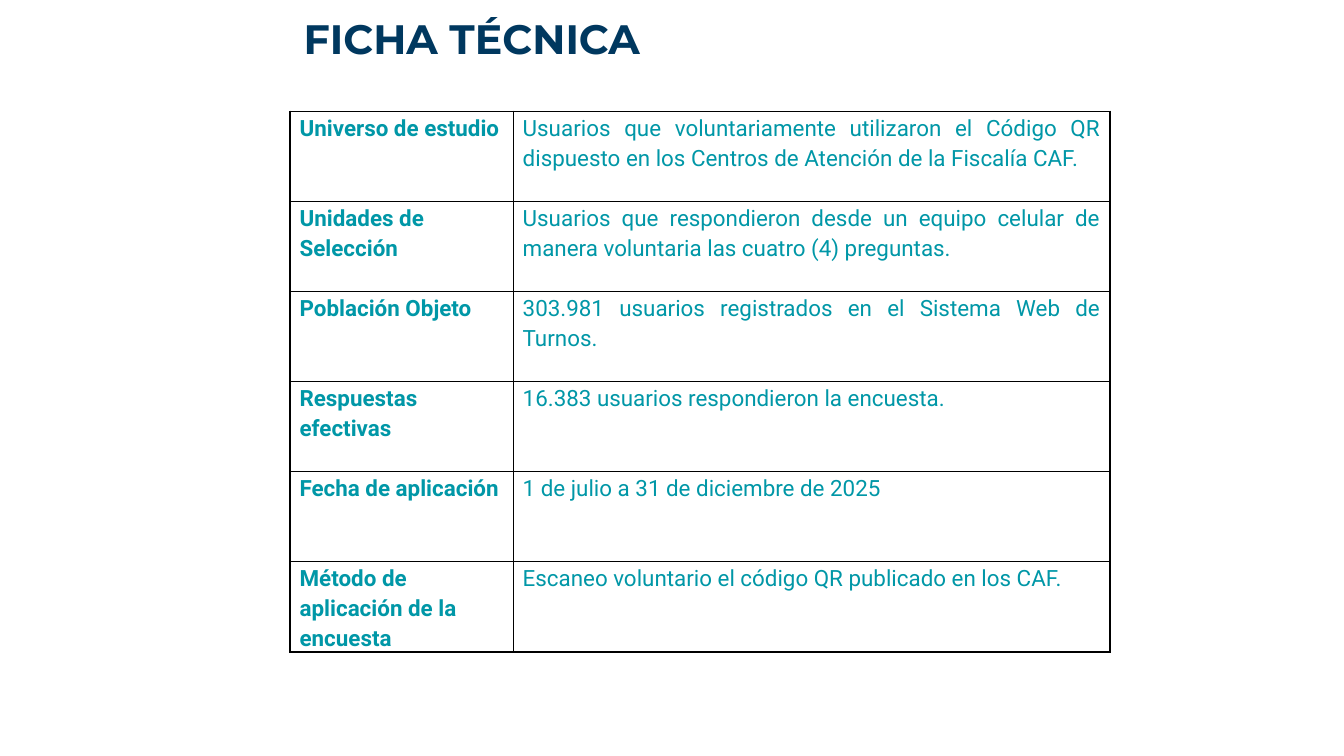
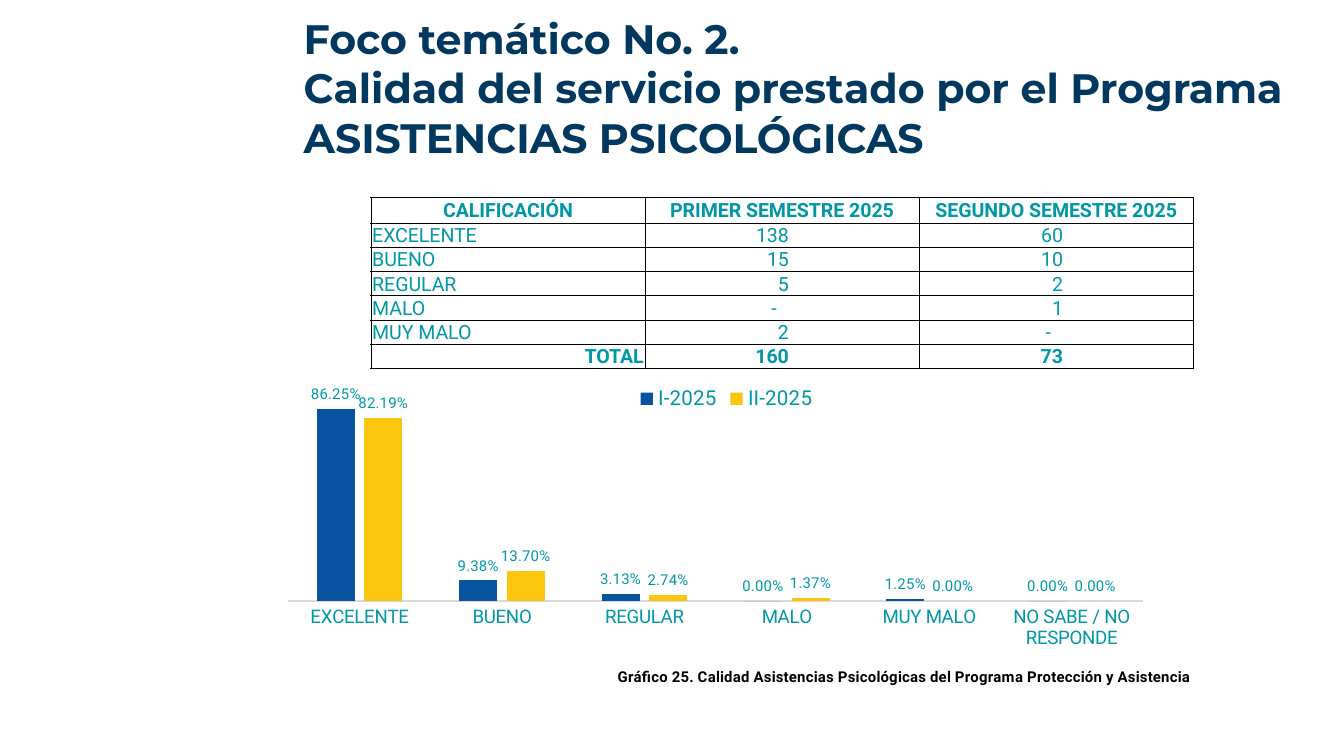
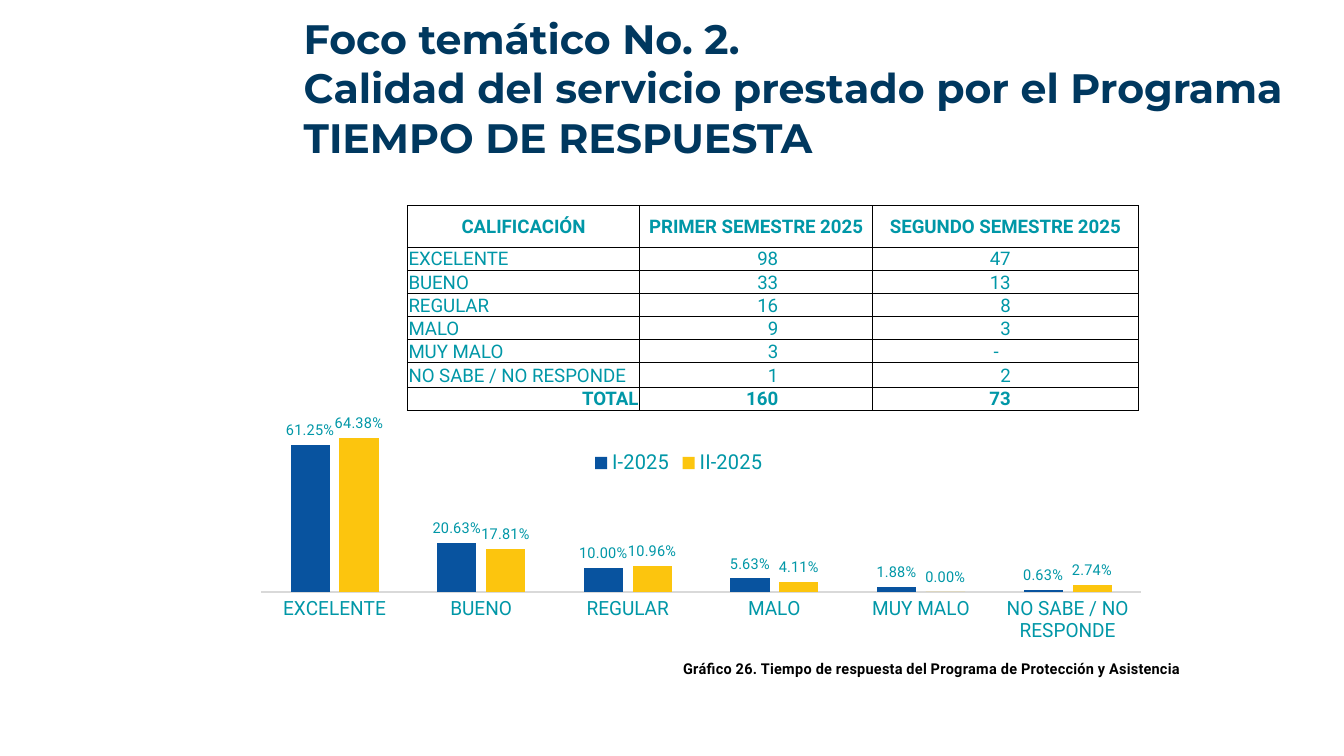
from lxml import etree
from pptx import Presentation
from pptx.chart.data import CategoryChartData
from pptx.dml.color import RGBColor
from pptx.enum.chart import XL_CHART_TYPE, XL_LABEL_POSITION, XL_LEGEND_POSITION, XL_TICK_MARK
from pptx.enum.text import MSO_ANCHOR, MSO_AUTO_SIZE, PP_ALIGN
from pptx.oxml.ns import qn
from pptx.util import Inches, Pt

LEFT, MID, RIGHT, JUST = PP_ALIGN.LEFT, PP_ALIGN.CENTER, PP_ALIGN.RIGHT, PP_ALIGN.JUSTIFY
TOP, CENTER, LOW = MSO_ANCHOR.TOP, MSO_ANCHOR.MIDDLE, MSO_ANCHOR.BOTTOM
FIXED = MSO_AUTO_SIZE.NONE
COLUMN = XL_CHART_TYPE.COLUMN_CLUSTERED
ABOVE = XL_LEGEND_POSITION.TOP
OUTER = XL_LABEL_POSITION.OUTSIDE_END
NO_TICK = XL_TICK_MARK.NONE

NAVY, TEAL, BLACK, GREY = "00385F", "0097A7", "000000", "D9D9D9"
BARS = [("I-2025", "08539F"), ("II-2025", "FCC50E")]
HEAD, BODY = "Montserrat", "Roboto"
PERCENT = "0.00%"
FOCUS = ["Foco temático No. 2.", "Calidad del servicio prestado por el Programa"]
TERMS = ["CALIFICACIÓN", "PRIMER SEMESTRE 2025", "SEGUNDO SEMESTRE 2025"]
RATES = ["EXCELENTE", "BUENO", "REGULAR", "MALO", "MUY MALO", "NO SABE / NO RESPONDE"]

FACTS = [
    ["Universo de estudio", "Usuarios que voluntariamente utilizaron el Código QR "
     "dispuesto en los Centros de Atención de la Fiscalía CAF."],
    ["Unidades de Selección", "Usuarios que respondieron desde un equipo celular de "
     "manera voluntaria las cuatro (4) preguntas."],
    ["Población Objeto", "303.981 usuarios registrados en el Sistema Web de Turnos."],
    ["Respuestas efectivas", "16.383 usuarios respondieron la encuesta."],
    ["Fecha de aplicación", "1 de julio a 31 de diciembre de 2025"],
    ["Método de aplicación de la encuesta",
     "Escaneo voluntario el código QR publicado en los CAF."],
]
CARE = [["138", "60"], ["15", "10"], ["5", "2"], ["-", "1"], ["2", "-"]]
TIME = [["98", "47"], ["33", "13"], ["16", "8"], ["9", "3"], ["3", "-"], ["1", "2"]]
TOTAL = ["TOTAL", "160", "73"]

PAGES = [
    {
        "title": ["FICHA TÉCNICA"], "box": (7.65, 0.83),
        "spot": (2.16, 0.83), "cols": [1.66, 4.44], "rows": [0.67] * 6,
        "rule": 1, "size": 12, "cells": FACTS, "chart": None,
    },
    {
        "title": FOCUS + ["ASISTENCIAS PSICOLÓGICAS"], "box": (7.82, 1.01),
        "spot": (2.76, 1.47), "cols": [2.04] * 3, "rows": [0.19] + [0.16] * 6,
        "rule": 0.5, "size": 10.5, "edge": 1.07,
        "cells": [TERMS] + [[r] + v for r, v in zip(RATES, CARE)] + [TOTAL],
        "chart": {
            "at": (1.9, 2.54, 7.04, 2.67), "size": 10, "max": 1,
            "plot": (0.035, 0.104, 0.903, 0.621),
            "legend": (0.4, 0.11), "label": (0.38, 0.9),
            "text": "Gráfico 25. Calidad Asistencias Psicológicas del Programa Protección y Asistencia",
            "vals": [(0.8625, 0.0938, 0.0313, 0, 0.0125, 0),
                     (0.8219, 0.137, 0.0274, 0.0137, 0, 0)],
        },
    },
    {
        "title": FOCUS + ["TIEMPO DE RESPUESTA"], "box": (7.82, 1.01),
        "spot": (3.03, 1.53), "cols": [1.73, 1.73, 1.98],
        "rows": [0.31] + [0.16] * 5 + [0.18, 0.16],
        "rule": 0.5, "size": 10, "edge": 1.03,
        "cells": [TERMS] + [[r] + v for r, v in zip(RATES, TIME)] + [TOTAL],
        "chart": {
            "at": (1.78, 2.81, 7.03, 2.28), "size": 10.5, "max": 0.7,
            "plot": (0.024, 0.153, 0.957, 0.547),
            "legend": (0.38, 0.22), "label": (0.48, 0.91),
            "text": "Gráfico 26. Tiempo de respuesta del Programa de Protección y Asistencia",
            "vals": [(0.6125, 0.2063, 0.1, 0.0563, 0.0188, 0.0063),
                     (0.6438, 0.1781, 0.1096, 0.0411, 0, 0.0274)],
        },
    },
]


def style(font, face, size, tint, bold=False):
    font.name, font.size, font.bold = face, Pt(size), bold
    font.color.rgb = RGBColor.from_string(tint)


def place(node, slot, spots):
    for old in node.findall(qn("c:layout")):
        node.remove(old)
    frame = etree.Element(qn("c:layout"))
    node.insert(slot, frame)
    inner = etree.SubElement(frame, qn("c:manualLayout"))
    if len(spots) == 4:
        etree.SubElement(inner, qn("c:layoutTarget")).set("val", "inner")
    for key in ("xMode", "yMode"):
        etree.SubElement(inner, qn("c:" + key)).set("val", "edge")
    for key, spot in zip("xywh", spots):
        etree.SubElement(inner, qn("c:" + key)).set("val", str(spot))


deck = Presentation()
deck.slide_width = Inches(10)
deck.slide_height = deck.slide_width * 9 // 16

for page in PAGES:
    slide = deck.slides.add_slide(deck.slide_layouts[5])

    title = slide.shapes.title
    title.left, title.top = Inches(2.16), Inches(0)
    title.width, title.height = [Inches(n) for n in page["box"]]
    frame = title.text_frame
    frame.word_wrap, frame.auto_size = True, FIXED
    frame.vertical_anchor = TOP
    frame.margin_left = frame.margin_right = Inches(0.1)
    frame.margin_top = frame.margin_bottom = Inches(0.1)
    for i, line in enumerate(page["title"]):
        par = frame.add_paragraph() if i else frame.paragraphs[0]
        par.alignment = LEFT
        run = par.add_run()
        run.text = line
        style(run.font, HEAD, 22, NAVY, True)

    plan = page["chart"]
    cols, rows, cells = page["cols"], page["rows"], page["cells"]
    x, y = page["spot"]
    grid = slide.shapes.add_table(len(rows), len(cols), Inches(x), Inches(y),
                                  Inches(sum(cols)), Inches(sum(rows))).table
    grid.first_row = grid.horz_banding = False
    for col, wide in zip(grid.columns, cols):
        col.width = Inches(wide)
    for row, tall in zip(grid.rows, rows):
        row.height = Inches(tall)
    last = len(rows) - 1
    for r, line in enumerate(cells):
        for c, text in enumerate(line):
            cell = grid.cell(r, c)
            par = cell.text_frame.paragraphs[0]
            cell.margin_left = cell.margin_right = Inches(0.01 if plan else 0.07)
            cell.margin_top = Inches(0.01 if plan else 0)
            cell.margin_bottom = 0
            if plan:
                bold = r in (0, last)
                cell.vertical_anchor = LOW if r else CENTER
                par.alignment = MID if r == 0 else RIGHT if c or r == last else LEFT
                if r and c:
                    shift = 0.09 if text == "-" else 0
                    cell.margin_right = Inches(cols[c] - page["edge"] + shift)
            else:
                bold = c == 0
                cell.vertical_anchor = TOP
                par.alignment = JUST if c else LEFT
                par.line_spacing, par.space_after = 1.15, Pt(8)
            run = par.add_run()
            run.text = text
            style(run.font, BODY, page["size"], TEAL, bold)
            cell.fill.background()
            props = cell._tc.get_or_add_tcPr()
            for i, side in enumerate(("lnL", "lnR", "lnT", "lnB")):
                edge = etree.Element(qn("a:" + side), w=str(Pt(page["rule"])))
                fill = etree.SubElement(edge, qn("a:solidFill"))
                etree.SubElement(fill, qn("a:srgbClr"), val=BLACK)
                props.insert(i, edge)

    if not plan:
        continue
    data = CategoryChartData(number_format=PERCENT)
    data.categories = RATES
    for (name, tint), vals in zip(BARS, plan["vals"]):
        data.add_series(name, vals)
    chart = slide.shapes.add_chart(COLUMN, *[Inches(n) for n in plan["at"]], data).chart
    style(chart.font, BODY, 11, TEAL)

    chart.has_title = True
    par = chart.chart_title.text_frame.paragraphs[0]
    run = par.add_run()
    run.text = plan["text"]
    style(run.font, BODY, 8, BLACK, True)
    place(chart.chart_title._element, 1, plan["label"])

    chart.has_legend = True
    chart.legend.position = ABOVE
    chart.legend.include_in_layout = False
    style(chart.legend.font, BODY, 11, TEAL)
    place(chart.legend._element, 1, plan["legend"])

    base, scale = chart.category_axis, chart.value_axis
    base.major_tick_mark = base.minor_tick_mark = NO_TICK
    style(base.tick_labels.font, BODY, plan["size"], TEAL)
    base.format.line.color.rgb = RGBColor.from_string(GREY)
    base.format.line.width = Pt(1)
    scale.has_major_gridlines = scale.visible = False
    scale.minimum_scale, scale.maximum_scale = 0, plan["max"]
    scale.tick_labels.number_format = PERCENT
    scale.tick_labels.number_format_is_linked = False

    plot = chart.plots[0]
    plot.gap_width, plot.overlap, plot.vary_by_categories = 150, -25, False
    for bar, (name, tint) in zip(plot.series, BARS):
        bar.invert_if_negative = False
        bar.format.fill.solid()
        bar.format.fill.fore_color.rgb = RGBColor.from_string(tint)
        tags = bar.data_labels
        tags.show_value, tags.position = True, OUTER
        tags.number_format, tags.number_format_is_linked = PERCENT, False
        style(tags.font, BODY, 8, TEAL)
    place(chart._chartSpace.chart.plotArea, 0, plan["plot"])

deck.save("out.pptx")
